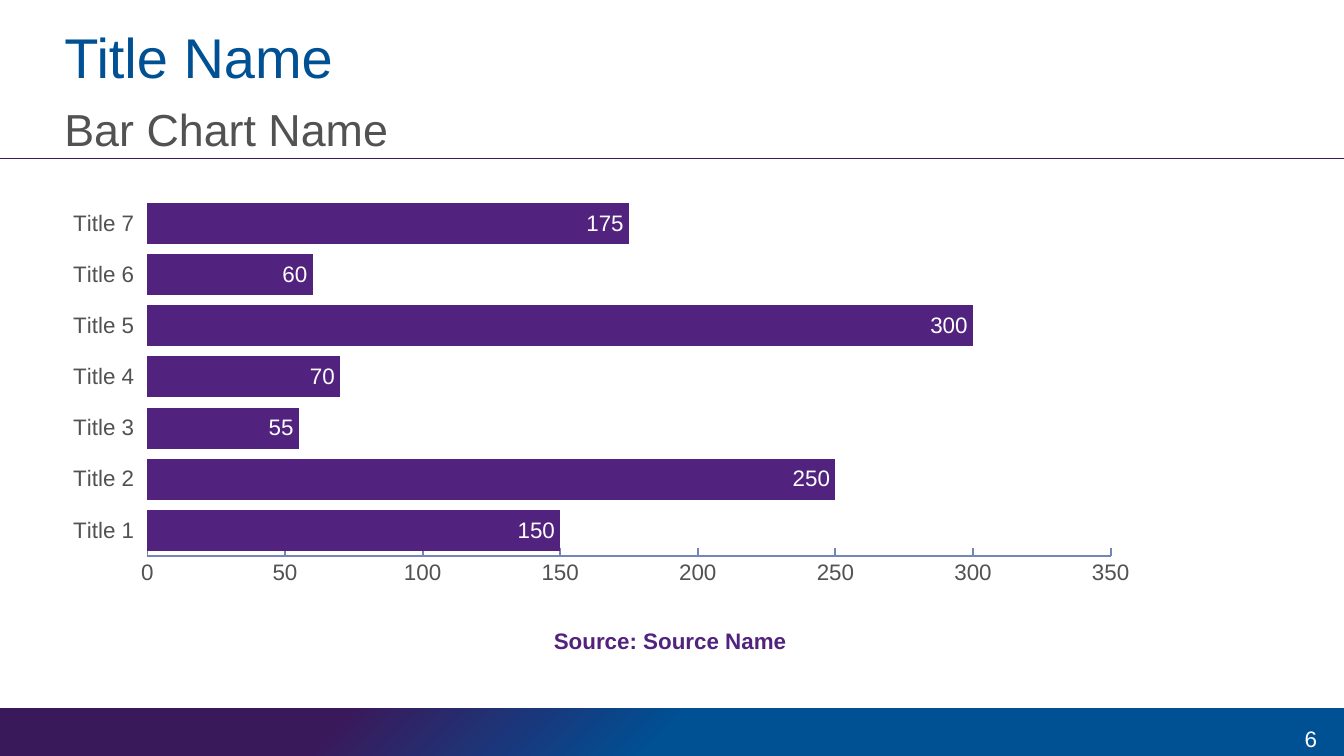
from lxml.etree import SubElement
from pptx import Presentation
from pptx.chart.data import CategoryChartData
from pptx.dml.color import RGBColor
from pptx.enum.chart import XL_CHART_TYPE, XL_LABEL_POSITION, XL_TICK_MARK
from pptx.enum.shapes import MSO_CONNECTOR, MSO_SHAPE
from pptx.enum.text import MSO_ANCHOR, PP_ALIGN
from pptx.oxml import parse_xml
from pptx.oxml.ns import nsdecls, qn
from pptx.util import Pt

SCALE = 6350
FONT = "Arial"
BLUE, DARK_PURPLE, PURPLE = "005094", "3A195B", "51237F"
GREY, WHITE, AXIS_BLUE = "525252", "FFFFFF", "7486B8"
VALUES = [150, 250, 55, 70, 300, 60, 175]


def px(length):
    """Turn px into EMU."""
    return length * SCALE


def color(value):
    """Turn a hex string into a colour."""
    return RGBColor.from_string(value)


def style_font(font, size, value, bold=False):
    """Set typeface, size, colour and weight."""
    font.name = FONT
    font.size = Pt(size)
    font.bold = bold
    font.color.rgb = color(value)


def add_text(slide, box, text, size, value, margins=(0, 0, 0, 7),
             anchor=MSO_ANCHOR.TOP, align=PP_ALIGN.LEFT):
    """Add one line of text in a box."""
    frame = slide.shapes.add_textbox(*map(px, box)).text_frame
    frame.word_wrap = True
    frame.vertical_anchor = anchor
    (frame.margin_left, frame.margin_top,
     frame.margin_right, frame.margin_bottom) = map(px, margins)
    paragraph = frame.paragraphs[0]
    paragraph.alignment = align
    run = paragraph.add_run()
    run.text = text
    style_font(run.font, size, value)


def add_header(slide, box):
    """Add the title, the subtitle and the rule below them."""
    left, top, width, height = box
    add_text(slide, (left + 69, top + 23, 1315, 81), "Title Name", 30, BLUE,
             anchor=MSO_ANCHOR.MIDDLE)
    add_text(slide, (left + 69, top + 109, 1315, 62), "Bar Chart Name", 24, GREY)
    bottom = px(top + height)
    rule = slide.shapes.add_connector(
        MSO_CONNECTOR.STRAIGHT, px(left), bottom, px(left + width), bottom)
    rule.line.color.rgb = color(DARK_PURPLE)
    rule.line.width = Pt(0.75)
    SubElement(rule._element.spPr, qn("a:effectLst"))


def add_footer(slide, box):
    """Add the gradient band and the slide number."""
    left, top, width, height = box
    band = slide.shapes.add_shape(MSO_SHAPE.RECTANGLE, *map(px, box))
    band.shadow.inherit = False
    band.line.fill.background()
    stops = "".join(
        f'<a:gs pos="{position * 1000}"><a:srgbClr val="{value}"/></a:gs>'
        for position, value in ((0, BLUE), (50, BLUE), (75, DARK_PURPLE)))
    gradient = parse_xml(
        f'<a:gradFill {nsdecls("a")} rotWithShape="1"><a:gsLst>{stops}</a:gsLst>'
        '<a:path path="circle"><a:fillToRect l="100000" t="100000"/></a:path>'
        '<a:tileRect r="-100000" b="-100000"/></a:gradFill>')
    band._element.spPr.find(qn("a:prstGeom")).addnext(gradient)
    add_text(slide, (left + width - 96, top + 6, 81, 52), "6", 12, WHITE,
             (14, 7, 14, 7), MSO_ANCHOR.MIDDLE, PP_ALIGN.RIGHT)


def set_layout(parent, index, **settings):
    """Give a chart part a manual layout at the given child index."""
    for present in parent.findall(qn("c:layout")):
        parent.remove(present)
    parts = "".join(f'<c:{key} val="{value}"/>' for key, value in settings.items())
    parent.insert(index, parse_xml(
        f'<c:layout {nsdecls("c")}><c:manualLayout>{parts}'
        '</c:manualLayout></c:layout>'))


def add_bar_chart(slide, box):
    """Add the bar chart with its source line as axis title."""
    width, height = box[2:]
    data = CategoryChartData()
    data.categories = [f"Title {number}" for number in range(1, len(VALUES) + 1)]
    data.add_series("Series 1", VALUES)
    chart = slide.shapes.add_chart(
        XL_CHART_TYPE.BAR_STACKED, *map(px, box), data).chart
    chart.has_legend = False
    chart.has_title = False
    style_font(chart.font, 12, GREY)

    plot = chart.plots[0]
    plot.gap_width = 25
    plot.overlap = 100
    plot.vary_by_categories = False
    fill = plot.series[0].format.fill
    fill.solid()
    fill.fore_color.rgb = color(PURPLE)
    labels = plot.series[0].data_labels
    labels.show_value = True
    labels.position = XL_LABEL_POSITION.INSIDE_END
    style_font(labels.font, 12, WHITE)

    category_axis = chart.category_axis
    category_axis.has_major_gridlines = False
    category_axis.major_tick_mark = XL_TICK_MARK.OUTSIDE
    category_axis.format.line.fill.background()
    style_font(category_axis.tick_labels.font, 12, GREY)

    value_axis = chart.value_axis
    value_axis.has_major_gridlines = False
    value_axis.major_tick_mark = XL_TICK_MARK.INSIDE
    value_axis.minimum_scale = 0
    value_axis.maximum_scale = 350
    value_axis.major_unit = 50
    value_axis.format.line.color.rgb = color(AXIS_BLUE)
    value_axis.format.line.width = Pt(1)
    style_font(value_axis.tick_labels.font, 12, GREY)

    title = value_axis.axis_title
    run = title.text_frame.paragraphs[0].add_run()
    run.text = "Source: Source Name"
    style_font(run.font, 12, PURPLE, True)
    set_layout(title._element, 1, xMode="edge", yMode="edge",
               x=534 / width, y=478 / height)
    set_layout(chart._chartSpace.chart.plotArea, 0, layoutTarget="inner",
               xMode="edge", yMode="edge", x=103 / width, y=22 / height,
               w=1032 / width, h=384 / height)


def main():
    """Build and save the slide."""
    presentation = Presentation()
    presentation.slide_width = px(1440)
    presentation.slide_height = px(810)
    slide = presentation.slides.add_slide(presentation.slide_layouts[6])
    add_footer(slide, (0, 759, 1440, 51))
    add_header(slide, (0, 0, 1440, 170))
    add_bar_chart(slide, (55, 190, 1260, 524))
    presentation.save("out.pptx")


if __name__ == "__main__":
    main()
